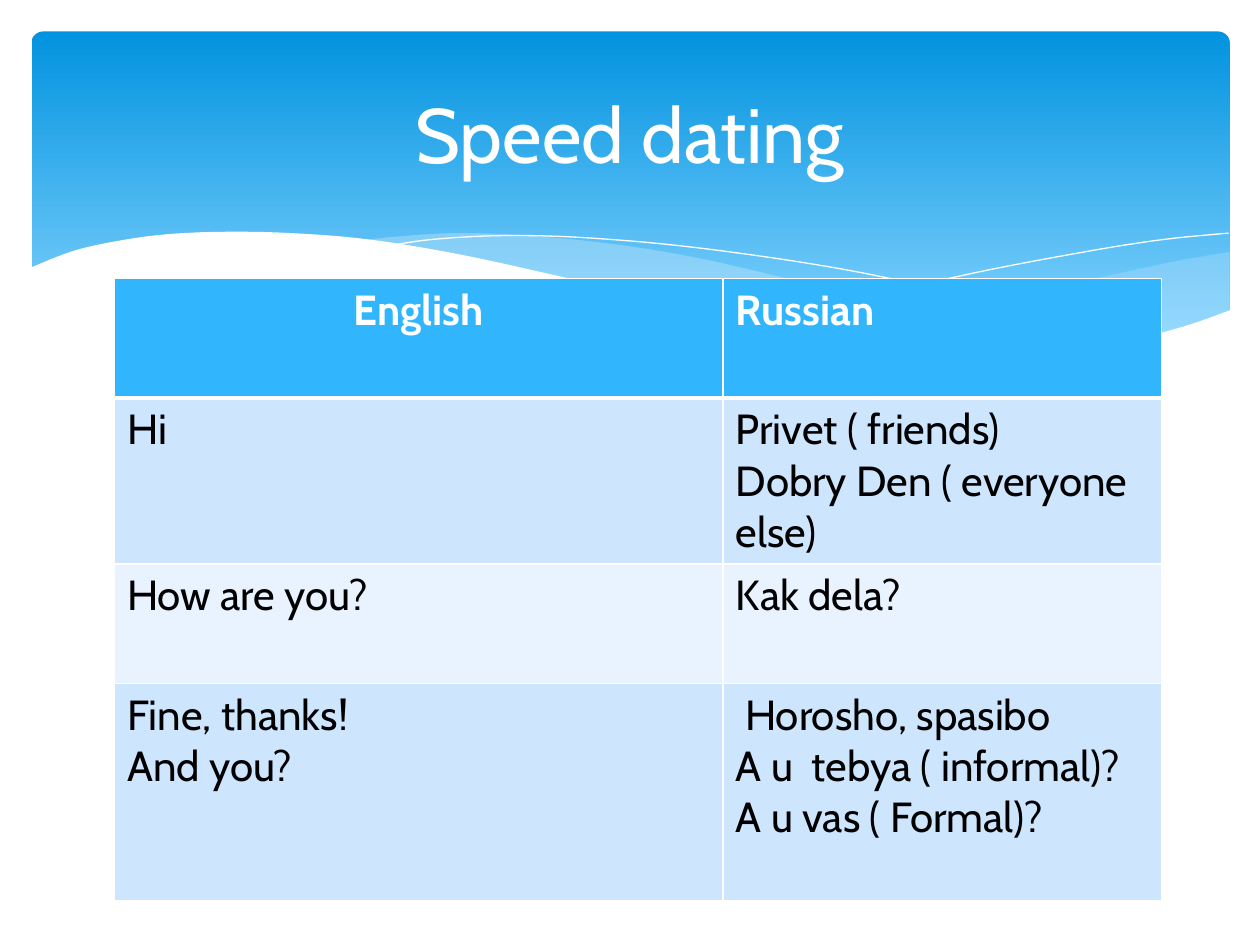
from dataclasses import dataclass

from lxml import etree
from pptx import Presentation
from pptx import util as u
from pptx.dml.color import RGBColor
from pptx.enum import shapes, text
from pptx.oxml.ns import qn


@dataclass(frozen=True)
class Theme:
    font: str = "Cabin"
    title_size: int = 44
    table_size: int = 24
    white: str = "FFFFFF"
    black: str = "000000"
    banner_top: str = "0293E0"
    banner_bottom: str = "83D3FE"
    wave: str = "C6E7FC"
    header: str = "31B6FD"
    bands: tuple = ("CEE5FE", "E8F3FF")


THEME = Theme()
WIDTH, HEIGHT = 10, 7.5
TITLE = "Speed dating"
ROWS = [
    ("English", "Russian"),
    ("Hi", "Privet ( friends)\nDobry Den ( everyone else)"),
    ("How are you?", "Kak dela?"),
    ("Fine, thanks!\nAnd you?", " Horosho, spasibo\nA u  tebya ( informal)?\nA u vas ( Formal)?"),
]
COLUMN_WIDTHS = (4.83, 3.48)
ROW_HEIGHTS = (0.95, 0.95, 0.95, 1.72)

RIGHT_WAVE = [
    [(9.76, 2), (9.35, 2.07), (8.61, 2.23), (7.53, 2.48), (6.61, 2.65)],
    [(6.61, 2.65), (7.19, 2.72), (7.69, 2.77), (8.14, 2.78), (8.63, 2.75),
     (9.13, 2.67), (9.49, 2.57), (9.76, 2.47)],
]
MIDDLE_WAVE = [
    [(8.93, 2.73), (8.07, 2.6), (7.06, 2.4), (6.29, 2.22), (5.55, 2.05), (4.89, 1.94),
     (4.2, 1.87), (3.61, 1.85), (3.13, 1.88), (2.86, 1.91)],
    [(2.86, 1.91), (3.62, 2.03), (4.49, 2.22), (5.3, 2.4), (6.01, 2.55), (6.8, 2.68),
     (7.48, 2.76), (8.07, 2.78), (8.57, 2.77), (8.93, 2.73)],
]
FALLING_LINE = [(3.09, 1.95), (3.44, 1.9), (4.01, 1.87), (4.69, 1.89), (5.56, 1.97),
                (6.65, 2.13), (7.6, 2.33), (8.31, 2.51), (9.07, 2.72)]
RISING_LINE = [(6.13, 2.57), (6.95, 2.35), (7.76, 2.16), (8.66, 1.99), (9.24, 1.9), (9.75, 1.85)]
FRONT_WAVE = [
    [(9.77, 2.46), (9.4, 2.59), (8.99, 2.69), (8.5, 2.75), (8.09, 2.77), (7.44, 2.74),
     (6.68, 2.65), (5.79, 2.5), (5.03, 2.33), (4.47, 2.2), (3.65, 2.02), (2.92, 1.9),
     (2.3, 1.85), (1.77, 1.84), (1.32, 1.86), (0.95, 1.91), (0.59, 1.99), (0.23, 2.13)],
    [(0.23, 3.29), (9.77, 3.29)],
]


def color(value):
    return RGBColor.from_string(value)


def inches(*values):
    return [u.Inches(value) for value in values]


def smooth(points, steps=6):
    padded = [points[0], *points, points[-1]]
    curve = [points[0]]
    for a, b, c, d in zip(padded, padded[1:], padded[2:], padded[3:]):
        for step in range(1, steps + 1):
            t = step / steps
            curve.append(tuple(
                (2 * q + (r - p) * t + (2 * p - 5 * q + 4 * r - s) * t ** 2
                 + (3 * q - p - 3 * r + s) * t ** 3) / 2
                for p, q, r, s in zip(a, b, c, d)))
    return curve


def add_curve(slide, curves, fill=None, opacity=100):
    points = [tuple(inches(*point)) for curve in curves for point in smooth(curve)]
    builder = slide.shapes.build_freeform(*points[0])
    builder.add_line_segments(points[1:], close=fill is not None)
    shape = builder.convert_to_shape()
    shape.shadow.inherit = False
    if fill is None:
        shape.fill.background()
        shape.line.color.rgb = color(THEME.white)
        shape.line.width = u.Pt(0)
        return
    shape.fill.solid()
    shape.fill.fore_color.rgb = color(fill)
    shape.line.fill.background()
    if opacity < 100:
        for node in shape.fill._xPr.iter(qn("a:srgbClr")):
            etree.SubElement(node, qn("a:alpha"), val=str(opacity * 1000))


def add_banner(slide):
    shape = slide.shapes.add_shape(
        shapes.MSO_SHAPE.ROUNDED_RECTANGLE, *inches(0.25, 0.25, 9.51, 2.7))
    shape.adjustments[0] = 0.034
    shape.shadow.inherit = False
    shape.line.fill.background()
    shape.fill.gradient()
    shape.fill.gradient_angle = 270
    stops = ((0, THEME.banner_top), (0.9, THEME.banner_bottom))
    for stop, (position, value) in zip(shape.fill.gradient_stops, stops):
        stop.position = position
        stop.color.rgb = color(value)


def write(text_frame, content, size, value, bold=False, centered=False):
    text_frame.text = content
    for paragraph in text_frame.paragraphs:
        paragraph.alignment = text.PP_ALIGN.CENTER if centered else text.PP_ALIGN.LEFT
        for run in paragraph.runs:
            run.font.name = THEME.font
            run.font.size = u.Pt(size)
            run.font.bold = bold
            run.font.color.rgb = color(value)


def add_borders(cell, widths):
    properties = cell._tc.get_or_add_tcPr()
    for side, width in widths.items():
        line = etree.SubElement(properties, qn(f"a:ln{side}"), w=str(u.Pt(width)))
        fill = etree.SubElement(line, qn("a:solidFill"))
        etree.SubElement(fill, qn("a:srgbClr"), val=THEME.white)


def add_phrases(slide):
    frame = slide.shapes.add_table(
        len(ROWS), len(COLUMN_WIDTHS),
        *inches(0.91, 2.21, sum(COLUMN_WIDTHS), sum(ROW_HEIGHTS)))
    table = frame.table
    for column, width in zip(table.columns, COLUMN_WIDTHS):
        column.width = u.Inches(width)
    for i, (row, height) in enumerate(zip(table.rows, ROW_HEIGHTS)):
        row.height = u.Inches(height)
        header = i == 0
        for j, cell in enumerate(row.cells):
            write(cell.text_frame, ROWS[i][j], THEME.table_size,
                  THEME.white if header else THEME.black, header, header and j == 0)
            add_borders(cell, {"L": 1, "R": 1, "T": 3 if i == 1 else 1, "B": 3 if header else 1})
            cell.fill.solid()
            cell.fill.fore_color.rgb = color(THEME.header if header else THEME.bands[(i - 1) % 2])


def add_title(slide):
    box = slide.shapes.add_textbox(*inches(0.05 * WIDTH, 0.37, 0.9 * WIDTH, 1.37))
    box.text_frame.word_wrap = True
    box.text_frame.vertical_anchor = text.MSO_ANCHOR.MIDDLE
    write(box.text_frame, TITLE, THEME.title_size, THEME.white, centered=True)


def main():
    presentation = Presentation()
    presentation.slide_width, presentation.slide_height = inches(WIDTH, HEIGHT)
    slide = presentation.slides.add_slide(presentation.slide_layouts[6])
    add_banner(slide)
    add_curve(slide, RIGHT_WAVE, THEME.wave, 29)
    add_curve(slide, MIDDLE_WAVE, THEME.wave, 40)
    add_curve(slide, [FALLING_LINE])
    add_curve(slide, [RISING_LINE])
    add_curve(slide, FRONT_WAVE, THEME.white)
    add_phrases(slide)
    add_title(slide)
    presentation.save("out.pptx")


if __name__ == "__main__":
    main()
